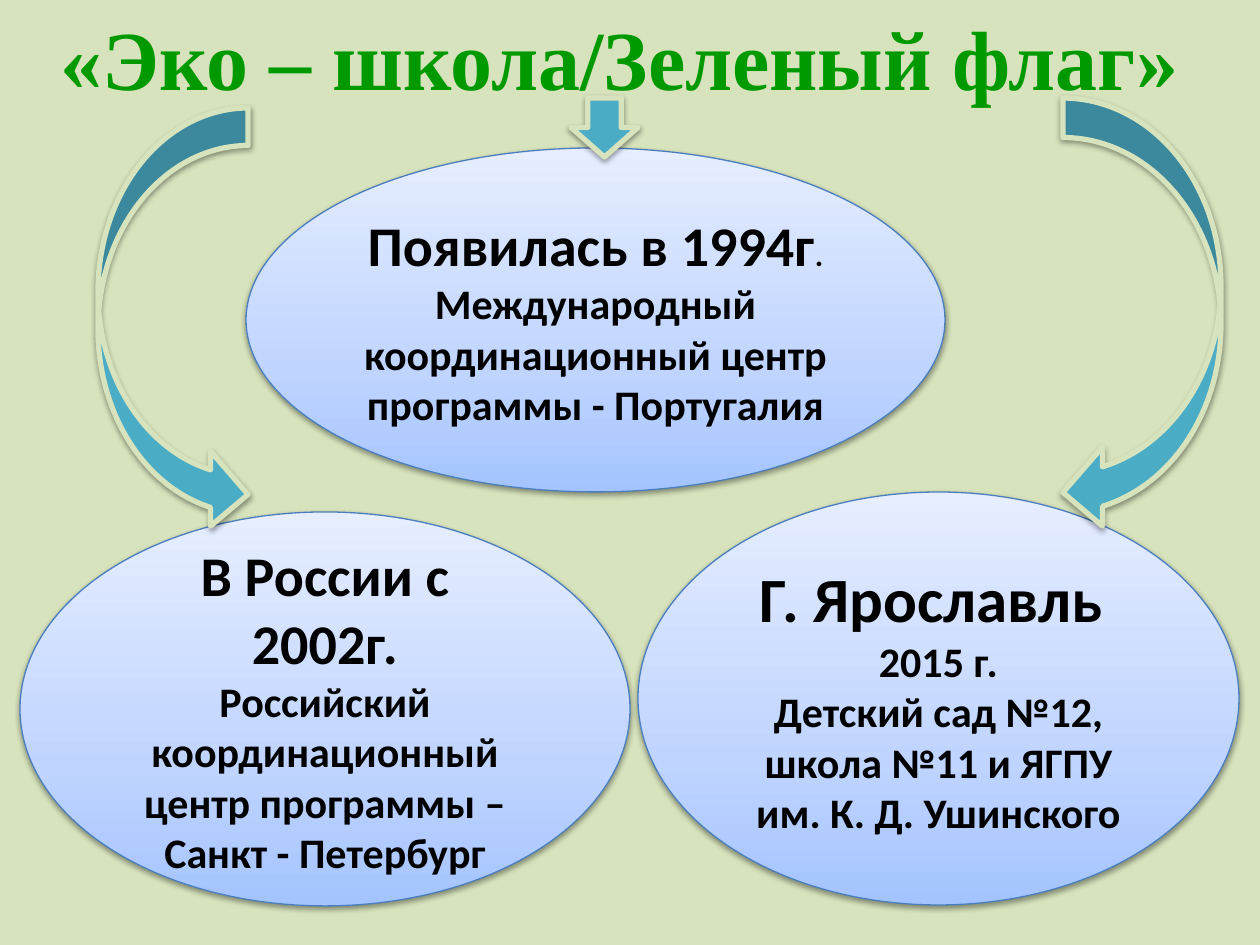
from copy import deepcopy
from dataclasses import dataclass

from lxml import etree
from pptx import Presentation
from pptx.dml.color import RGBColor
from pptx.enum.shapes import MSO_SHAPE
from pptx.enum.text import MSO_ANCHOR, MSO_AUTO_SIZE, PP_ALIGN
from pptx.oxml.ns import qn
from pptx.util import Emu, Pt

OVAL = MSO_SHAPE.OVAL
CURVED_RIGHT = MSO_SHAPE.CURVED_RIGHT_ARROW
CURVED_LEFT = MSO_SHAPE.CURVED_LEFT_ARROW
DOWN = MSO_SHAPE.DOWN_ARROW
CENTER = PP_ALIGN.CENTER
MIDDLE = MSO_ANCHOR.MIDDLE
FIT_SHAPE = MSO_AUTO_SIZE.SHAPE_TO_FIT_TEXT
PX = 914400 // 126


@dataclass(frozen=True)
class Theme:
    background: str = "D7E3BC"
    title: str = "009900"
    text: str = "000000"
    outline: str = "4B7EBC"
    arrow: str = "4BACC6"
    shadow: str = "000000"
    gradient: tuple = ((0, "A4C4FF"), (0.35, "BFD4FF"), (1, "E6EEFF"))
    title_font: str = "Times New Roman"
    body_font: str = "Calibri"
    title_size: int = 48
    city_size: int = 36
    head_size: int = 32
    body_size: int = 24
    dot_size: int = 18


T = Theme()

TITLE = "«Эко – школа/Зеленый флаг» "
OVALS = [
    ((246, 148, 699, 344), [
        ([("Появилась в 1994г", T.head_size), (".", T.dot_size)]),
        ([("Международный координационный центр программы - Португалия", T.body_size)]),
    ]),
    ((20, 512, 610, 394), [
        ([("В России с 2002г.", T.head_size)]),
        ([("Российский координационный центр программы – Санкт - Петербург", T.body_size)]),
    ]),
    ((638, 492, 601, 413), [
        ([("Г. Ярославль ", T.city_size)]),
        ([("2015 г.", T.body_size)]),
        ([("Детский сад №12, школа №11 и ЯГПУ им. К. Д. Ушинского", T.body_size)]),
    ]),
]
ARROWS = [
    (CURVED_RIGHT, (98, 108, 150, 424)),
    (CURVED_LEFT, (1063, 98, 158, 434)),
    (DOWN, (571, 98, 67, 59)),
]


def rgb(value):
    return RGBColor.from_string(value)


def box(px):
    return [Emu(v * PX) for v in px]


def add_shadow(sp):
    sp.shadow.inherit = False
    effects = sp._element.spPr.find(qn("a:effectLst"))
    shadow = etree.SubElement(effects, qn("a:outerShdw"), blurRad="40000",
                              dist="20000", dir="5400000", rotWithShape="0")
    color = etree.SubElement(shadow, qn("a:srgbClr"), val=T.shadow)
    etree.SubElement(color, qn("a:alpha"), val="38000")


def add_shape(s, kind, px, line, width):
    sp = s.shapes.add_shape(kind, *box(px))
    sp.line.color.rgb = rgb(line)
    sp.line.width = Pt(width)
    add_shadow(sp)
    return sp


def fill_gradient(sp):
    sp.fill.gradient()
    sp.fill.gradient_angle = 90
    stops = sp._element.spPr.find(".//" + qn("a:gsLst"))
    stops.insert(1, deepcopy(stops[0]))
    for stop, (position, color) in zip(sp.fill.gradient_stops, T.gradient):
        stop.position = position
        stop.color.rgb = rgb(color)


def write(p, runs, font, color):
    p.alignment = CENTER
    p.font.name = font
    p.font.bold = True
    p.font.color.rgb = rgb(color)
    if len(runs) == 1:
        p.font.size = Pt(runs[0][1])
    for text, size in runs:
        r = p.add_run()
        r.text = text
        if len(runs) > 1:
            r.font.size = Pt(size)


def add_title(s):
    tf = s.shapes.add_textbox(*box((0, 0, 1260, 115))).text_frame
    tf.word_wrap = True
    tf.auto_size = FIT_SHAPE
    write(tf.paragraphs[0], [(TITLE, T.title_size)], T.title_font, T.title)


def add_oval(s, px, paragraphs):
    sp = add_shape(s, OVAL, px, T.outline, 0.75)
    fill_gradient(sp)
    tf = sp.text_frame
    tf.word_wrap = True
    tf.vertical_anchor = MIDDLE
    for i, runs in enumerate(paragraphs):
        p = tf.add_paragraph() if i else tf.paragraphs[0]
        write(p, runs, T.body_font, T.text)


def add_arrow(s, kind, px):
    sp = add_shape(s, kind, px, T.background, 3)
    sp.fill.solid()
    sp.fill.fore_color.rgb = rgb(T.arrow)


def main():
    prs = Presentation()
    prs.slide_width, prs.slide_height = box((1260, 945))
    s = prs.slides.add_slide(prs.slide_layouts[6])
    s.background.fill.solid()
    s.background.fill.fore_color.rgb = rgb(T.background)
    for px, paragraphs in OVALS:
        add_oval(s, px, paragraphs)
    add_title(s)
    for kind, px in ARROWS:
        add_arrow(s, kind, px)
    prs.save("out.pptx")


if __name__ == "__main__":
    main()
